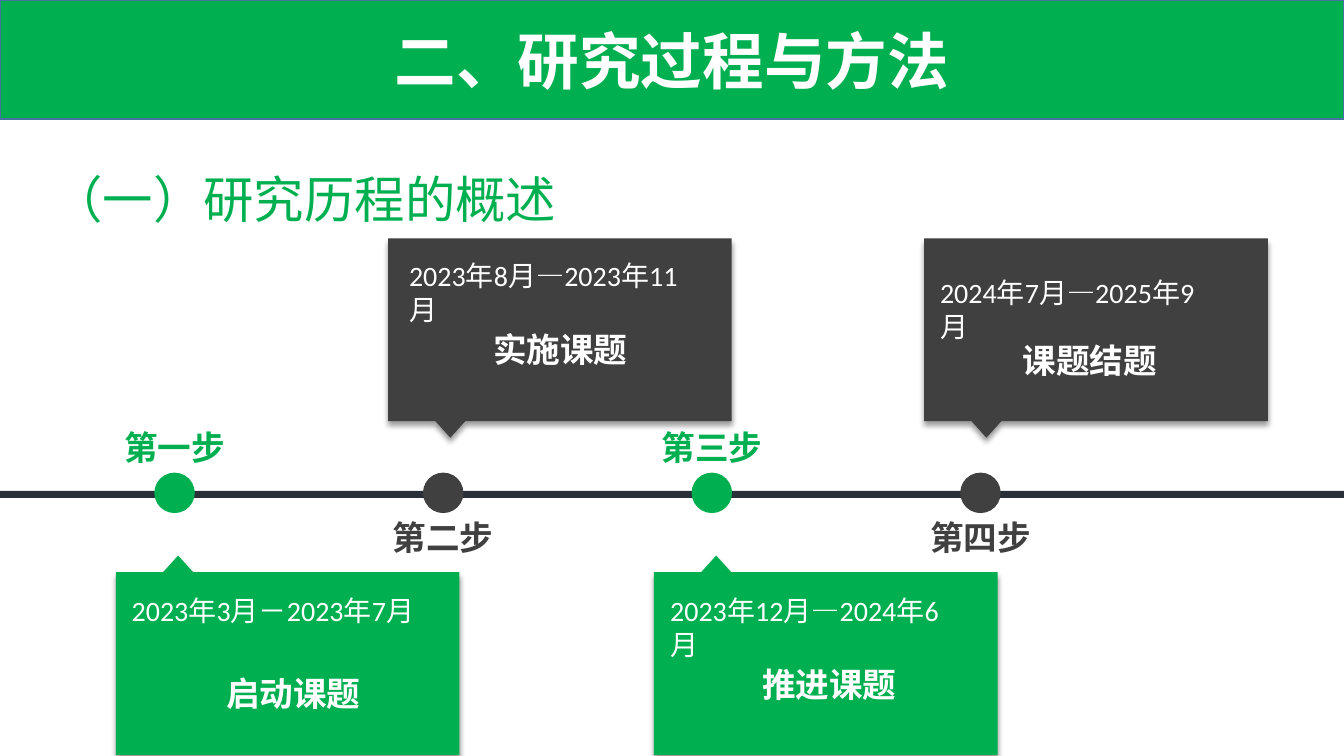
from lxml import etree
from pptx import Presentation
from pptx import util as u
from pptx.dml.color import RGBColor
from pptx.enum import shapes, text
from pptx.oxml.ns import qn

GREEN, DARK, WHITE = "00B050", "404040", "FFFFFF"
CJK = "Noto Sans CJK SC"
WIDTH, HEIGHT = 33.87, 19.05

TITLE = "二、研究过程与方法"
HEADING = "（一）研究历程的概述"
# Lengths in cm; date is (text, left, top, width), topic is (text, left, top)
STEPS = [
    {"label": "第一步", "card_left": 2.92, "above": False, "font": "Calibri",
     "date": ("2023年3月－2023年7月", 3.07, 14.83, 7.62), "topic": ("启动课题", 4.09, 16.54)},
    {"label": "第二步", "card_left": 9.78, "above": True, "font": CJK,
     "date": ("2023年8月—2023年11月", 10.06, 6.4, 7.9), "topic": ("实施课题", 10.82, 7.87)},
    {"label": "第三步", "card_left": 16.48, "above": False, "font": CJK,
     "date": ("2023年12月—2024年6月", 16.64, 14.83, 7.9), "topic": ("推进课题", 17.6, 16.31)},
    {"label": "第四步", "card_left": 23.29, "above": True, "font": CJK,
     "date": ("2024年7月—2025年9月", 23.44, 6.83, 7.54), "topic": ("课题结题", 24.16, 8.13)},
]
DOT_LEFT, DOT_TOP, DOT_SIZE, DOT_STEP = 3.89, 11.91, 1.02, 6.77
LABEL_WIDTH, TOPIC_WIDTH = 3.07, 6.6
CARD_WIDTH, CARD_HEIGHT = 8.66, 4.6
TIP_OFFSET, TIP_HALF, TIP_HEIGHT = 1.57, 0.38, 0.42


def colour(value):
    return RGBColor.from_string(value)


def box(*lengths):
    return [u.Cm(length) for length in lengths]


def paint(shape, fill, line=None):
    shape.shadow.inherit = False
    shape.fill.solid()
    shape.fill.fore_color.rgb = colour(fill)
    if line:
        shape.line.color.rgb = colour(line)
        shape.line.width = u.Pt(1)
    else:
        shape.line.fill.background()


def write(shape, words, size, font, fill, bold=False, align=text.PP_ALIGN.LEFT,
          anchor=text.MSO_ANCHOR.TOP, **spacing):
    frame = shape.text_frame
    frame.word_wrap = True
    frame.auto_size = text.MSO_AUTO_SIZE.NONE
    frame.vertical_anchor = anchor
    paragraph = frame.paragraphs[0]
    for name, value in {"alignment": align, **spacing}.items():
        setattr(paragraph, name, value)
    run = paragraph.add_run()
    run.text = words
    for name, value in {"size": u.Pt(size), "name": font, "bold": bold}.items():
        setattr(run.font, name, value)
    run.font.color.rgb = colour(fill)
    latin = run.font._element.find(qn("a:latin"))
    east_asian = etree.Element(qn("a:ea"), typeface=CJK)
    latin.addnext(east_asian)


def add_shadow(shape):
    effects = shape._element.spPr.find(qn("a:effectLst"))
    shadow = etree.SubElement(effects, qn("a:outerShdw"), blurRad=str(u.Pt(4)),
                              dist=str(u.Pt(3)), dir="5400000", algn="t", rotWithShape="0")
    black = etree.SubElement(shadow, qn("a:srgbClr"), val="000000")
    etree.SubElement(black, qn("a:alpha"), val="40000")


def add_card(group, left, above, fill):
    """Draw a box whose tip points at the timeline."""
    tip, base, far = (11.03, -1, -1) if above else (14.0, 1, 1)
    base = tip + base * TIP_HEIGHT
    far = base + far * CARD_HEIGHT
    middle, right = left + TIP_OFFSET, left + CARD_WIDTH
    points = [(middle + TIP_HALF, base), (right, base), (right, far),
              (left, far), (left, base), (middle - TIP_HALF, base)]
    builder = group.shapes.build_freeform(*box(middle, tip))
    builder.add_line_segments([box(*point) for point in points], close=True)
    card = builder.convert_to_shape()
    paint(card, fill)
    add_shadow(card)


def add_step(slide, index, step):
    fill = DARK if step["above"] else GREEN
    dot_left = DOT_LEFT + index * DOT_STEP
    dot = slide.shapes.add_shape(shapes.MSO_SHAPE.OVAL,
                                 *box(dot_left, DOT_TOP, DOT_SIZE, DOT_SIZE))
    paint(dot, fill)

    label_left = dot_left + (DOT_SIZE - LABEL_WIDTH) / 2
    label_top = 12.9 if step["above"] else 10.64
    label = slide.shapes.add_textbox(*box(label_left, label_top, LABEL_WIDTH, 1.27))
    write(label, step["label"], 24, "Arial", fill, True, text.PP_ALIGN.CENTER)

    group = slide.shapes.add_group_shape()
    add_card(group, step["card_left"], step["above"], fill)
    words, left, top = step["topic"]
    topic = group.shapes.add_textbox(*box(left, top, TOPIC_WIDTH, 1.45))
    write(topic, words, 24, step["font"], WHITE, True, text.PP_ALIGN.CENTER, line_spacing=1.3)
    words, left, top, width = step["date"]
    date = group.shapes.add_textbox(*box(left, top, width, 1.12))
    write(date, words, 20, "Calibri", WHITE)


def main():
    presentation = Presentation()
    presentation.slide_width, presentation.slide_height = box(WIDTH, HEIGHT)
    slide = presentation.slides.add_slide(presentation.slide_layouts[5])

    title = slide.shapes.title
    title.left, title.top, title.width, title.height = box(0, 0, WIDTH, 3)
    paint(title, GREEN, "43739E")
    write(title, TITLE, 44, CJK, WHITE, True, text.PP_ALIGN.CENTER, text.MSO_ANCHOR.MIDDLE)

    heading = slide.shapes.add_textbox(*box(1.07, 4.11, 28.65, 1.8))
    write(heading, HEADING, 36, CJK, GREEN, space_after=u.Pt(6))

    timeline = slide.shapes.add_shape(shapes.MSO_SHAPE.RECTANGLE, *box(0, 12.37, WIDTH, 0.18))
    paint(timeline, "29303A")
    for index, step in enumerate(STEPS):
        add_step(slide, index, step)

    presentation.save("out.pptx")


if __name__ == "__main__":
    main()
